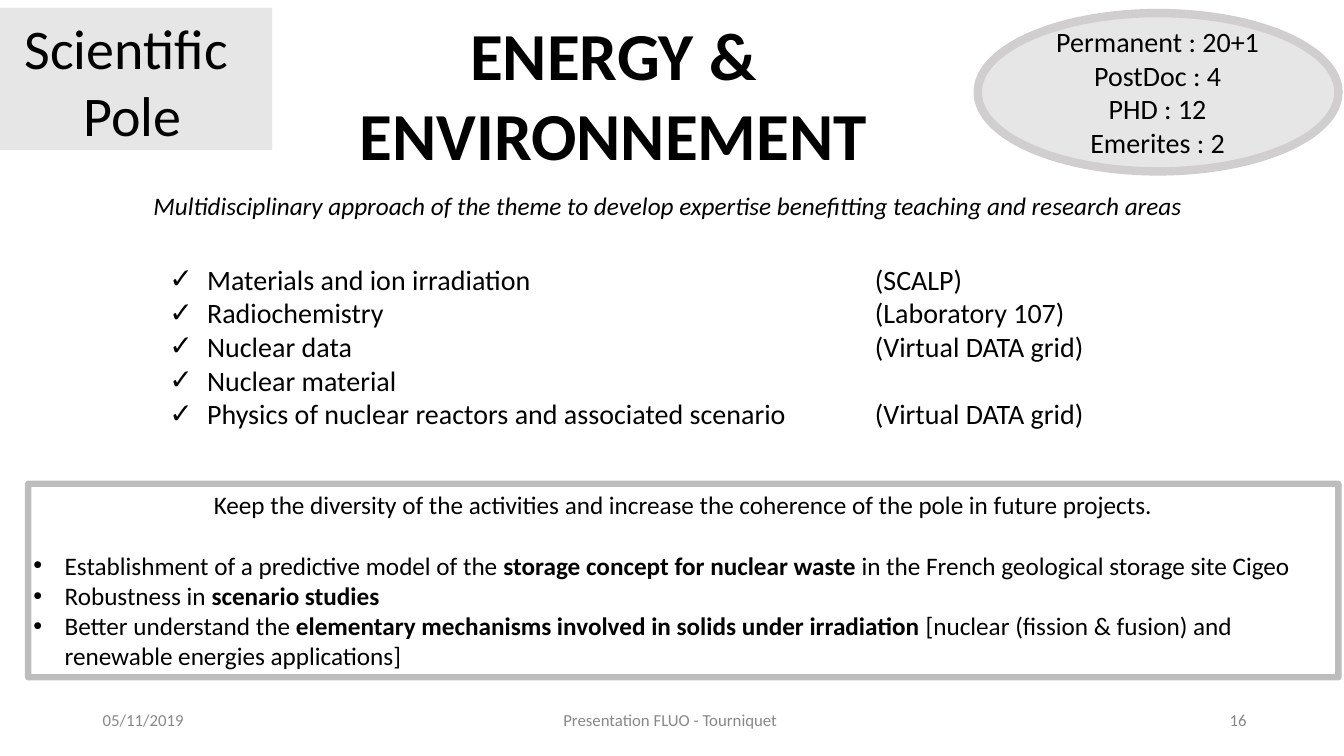
from lxml import etree
from pptx import Presentation, util as u
from pptx.dml.color import RGBColor
from pptx.enum import shapes, text
from pptx.oxml import ns

LEFT, MID, RIGHT = text.PP_ALIGN.LEFT, text.PP_ALIGN.CENTER, text.PP_ALIGN.RIGHT
TOP, CENTER = text.MSO_ANCHOR.TOP, text.MSO_ANCHOR.MIDDLE


def paint(target, code):
    if isinstance(code, str):
        target.rgb = RGBColor.from_string(code)


def node(parent, tag, **attrs):
    return etree.SubElement(parent, ns.qn(tag), {k: str(v) for k, v in attrs.items()})


def write(shape, lines, size=18, color="000000", bold=False, italic=False,
          align=MID, anchor=TOP, mark=None, hang=0, tab=0, start=0, gap=0):
    """Fill a shape; lines hold strings or lists of (words, bold) runs.
    Lines from index start on get the bullet mark, gap points before the first."""
    frame = shape.text_frame
    frame.word_wrap = True
    frame.auto_size = text.MSO_AUTO_SIZE.NONE
    frame.vertical_anchor = anchor
    frame.margin_left = frame.margin_right = u.Cm(0.13)
    frame.margin_top = frame.margin_bottom = u.Cm(0.13)
    for i, line in enumerate(lines):
        par = frame.paragraphs[0] if i == 0 else frame.add_paragraph()
        bullet = mark and i >= start
        par.alignment = LEFT if bullet else align
        par.space_before = u.Pt(gap if i and i == start else 0)
        if bullet:
            props = par._p.get_or_add_pPr()
            props.set("marL", str(u.Cm(hang)))
            props.set("indent", str(-u.Cm(hang)))
            node(props, "a:buFont", typeface="Arial")
            node(props, "a:buChar", char=mark)
            if tab:
                node(node(props, "a:tabLst"), "a:tab", pos=u.Cm(tab), algn="l")
        for words, heavy in [(line, bold)] if isinstance(line, str) else line:
            run = par.add_run()
            run.text = words
            font = run.font
            font.name, font.size = "Calibri", u.Pt(size)
            font.bold, font.italic = heavy, italic
            paint(font.color, color)


class Page:
    grey, edge, soft = "E7E6E6", "D0CECE", "888888"

    def __init__(self, deck):
        self.slide = deck.slides.add_slide(deck.slide_layouts[5])

    def title(self, box, words, **style):
        head = self.slide.shapes.title
        head.left, head.top, head.width, head.height = map(u.Cm, box)
        write(head, [words], **style)

    def label(self, box, lines, **style):
        write(self.slide.shapes.add_textbox(*map(u.Cm, box)), lines, **style)

    def shape(self, kind, box, lines=(), fill=None, line=None, width=0, alpha=None, **style):
        item = self.slide.shapes.add_shape(kind, *map(u.Cm, box))
        item.shadow.inherit = False
        if fill:
            item.fill.solid()
            paint(item.fill.fore_color, fill)
        else:
            item.fill.background()
        if line:
            item.line.width = u.Pt(width)
            paint(item.line.color, line)
            if alpha:
                tint = item.line._ln.find(".//" + ns.qn("a:srgbClr"))
                node(tint, "a:alpha", val=alpha * 1000)
        else:
            item.line.fill.background()
        write(item, lines, **style)


def main():
    deck = Presentation()
    deck.slide_width, deck.slide_height = u.Cm(33.87), u.Cm(19.05)
    page = Page(deck)
    rect, oval = shapes.MSO_SHAPE.RECTANGLE, shapes.MSO_SHAPE.OVAL

    # Heading
    page.title((6.15, 0.2, 18.62, 4.22), "ENERGY & ENVIRONNEMENT", size=48, bold=True)
    page.shape(rect, (-0.18, 0.2, 7.04, 3.58), ["Scientific ", "Pole"],
               fill=page.grey, size=40)

    # Staff
    page.shape(oval, (24.64, 0.33, 9.09, 3.99), fill=page.grey, line=page.edge, width=6)
    page.label((26.09, 0.56, 6.17, 3.51),
               ["Permanent : 20+1", "PostDoc : 4", "PHD : 12", "Emerites : 2"],
               size=20, anchor=CENTER)

    # Topics and their platforms
    page.label((0.46, 4.67, 32.74, 1.73),
               ["Multidisciplinary approach of the theme to develop expertise "
                "benefitting teaching and research areas"], italic=True)
    page.label((4.14, 6.48, 24.16, 5.13),
               ["Materials and ion irradiation\t(SCALP)",
                "Radiochemistry\t(Laboratory 107)",
                "Nuclear data\t(Virtual DATA grid)",
                "Nuclear material",
                "Physics of nuclear reactors and associated scenario\t(Virtual DATA grid)"],
               size=20, mark="✓", hang=0.95, tab=17.78)

    # Goals
    page.shape(rect, (0.71, 12.19, 33.02, 4.88), [
        "Keep the diversity of the activities and increase the coherence "
        "of the pole in future projects.",
        [("Establishment of a predictive model of the ", False),
         ("storage concept for nuclear waste ", True),
         ("in the French geological storage site Cigeo", False)],
        [("Robustness in ", False), ("scenario studies", True)],
        [("Better understand the ", False),
         ("elementary mechanisms involved in solids under irradiation ", True),
         ("[nuclear (fission & fusion) and renewable energies applications]", False)],
    ], line="000000", width=4.5, alpha=25, mark="•", hang=0.79, start=1, gap=22)

    # Footer
    for left, width, words, align in (
            (2.46, 7.37, "05/11/2019", LEFT),
            (11.35, 11.18, "Presentation FLUO - Tourniquet ", MID),
            (30.31, 1.24, "16", RIGHT)):
        page.label((left, 17.78, width, 0.74), [words], size=12, color=page.soft,
                   align=align, anchor=CENTER)

    deck.save("out.pptx")


if __name__ == "__main__":
    main()
